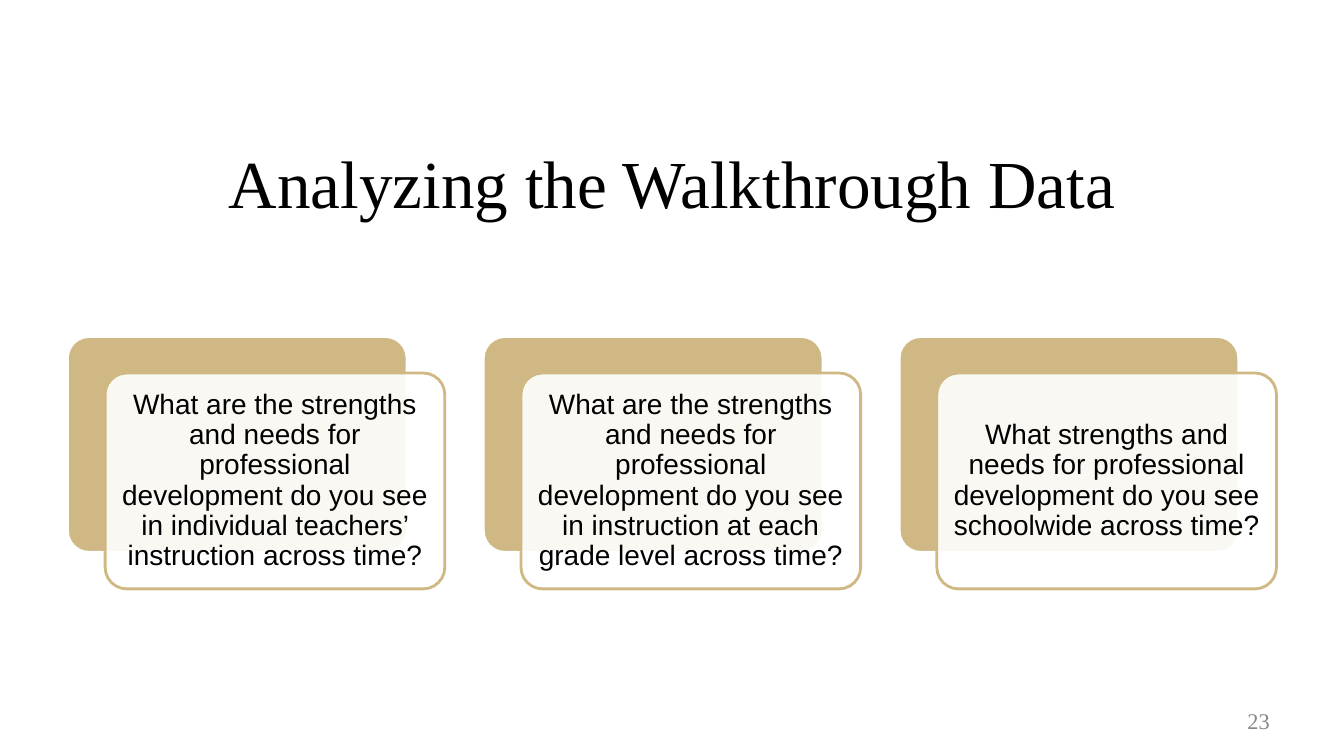
from lxml import etree
from pptx import Presentation
from pptx.dml.color import RGBColor
from pptx.enum import shapes, text
from pptx.oxml.ns import qn
from pptx.util import Cm, Pt

GOLD, WHITE, BLACK, GREY = "D0B884", "FFFFFF", "000000", "888888"
QUESTIONS = [
    "What are the strengths and needs for professional development "
    "do you see in individual teachers’ instruction across time?",
    "What are the strengths and needs for professional development "
    "do you see in instruction at each grade level across time?",
    "What strengths and needs for professional development "
    "do you see schoolwide across time?",
]
CARD_W, CARD_H, PITCH = 8.56, 5.44, 10.48


def write(sp, words, font, size, color, align, inset_x, inset_y):
    """Put one vertically centred paragraph in a shape."""
    tf = sp.text_frame
    tf.word_wrap = True
    tf.vertical_anchor = text.MSO_ANCHOR.MIDDLE
    tf.margin_left = tf.margin_right = Cm(inset_x)
    tf.margin_top = tf.margin_bottom = Cm(inset_y)
    p = tf.paragraphs[0]
    p.text = words
    p.alignment = align
    p.font.name = font
    p.font.size = Pt(size)
    p.font.color.rgb = RGBColor.from_string(color)
    return p


def add_card(left, top, fill, line):
    sp = s.shapes.add_shape(shapes.MSO_SHAPE.ROUNDED_RECTANGLE,
                            Cm(left), Cm(top), Cm(CARD_W), Cm(CARD_H))
    sp.adjustments[0] = 0.1
    sp.shadow.inherit = False
    sp.fill.solid()
    sp.fill.fore_color.rgb = RGBColor.from_string(fill)
    sp.line.color.rgb = RGBColor.from_string(line)
    sp.line.width = Pt(2)
    return sp


prs = Presentation()
prs.slide_width, prs.slide_height = Cm(33.87), Cm(19.05)
s = prs.slides.add_slide(prs.slide_layouts[6])

title = s.shapes.add_textbox(Cm(1.7), Cm(3.23), Cm(30.48), Cm(2.69))
write(title, "Analyzing the Walkthrough Data", "Times New Roman", 48, BLACK,
      text.PP_ALIGN.CENTER, 0.18, 0.1)

number = s.shapes.add_textbox(Cm(24.28), Cm(17.65), Cm(7.9), Cm(1.02))
write(number, "23", "Times New Roman", 16, GREY, text.PP_ALIGN.RIGHT, 0.18, 0.1)

for i, question in enumerate(QUESTIONS):
    left = 1.7 + i * PITCH
    add_card(left, 8.48, GOLD, WHITE)
    front = add_card(left + 0.95, 9.4, WHITE, GOLD)
    color = front.fill._xPr.find(qn("a:solidFill"))[0]
    etree.SubElement(color, qn("a:alpha")).set("val", "90000")
    p = write(front, question, "Arial", 20, BLACK, text.PP_ALIGN.CENTER, 0.2, 0.2)
    p.line_spacing = 0.9

prs.save("out.pptx")
